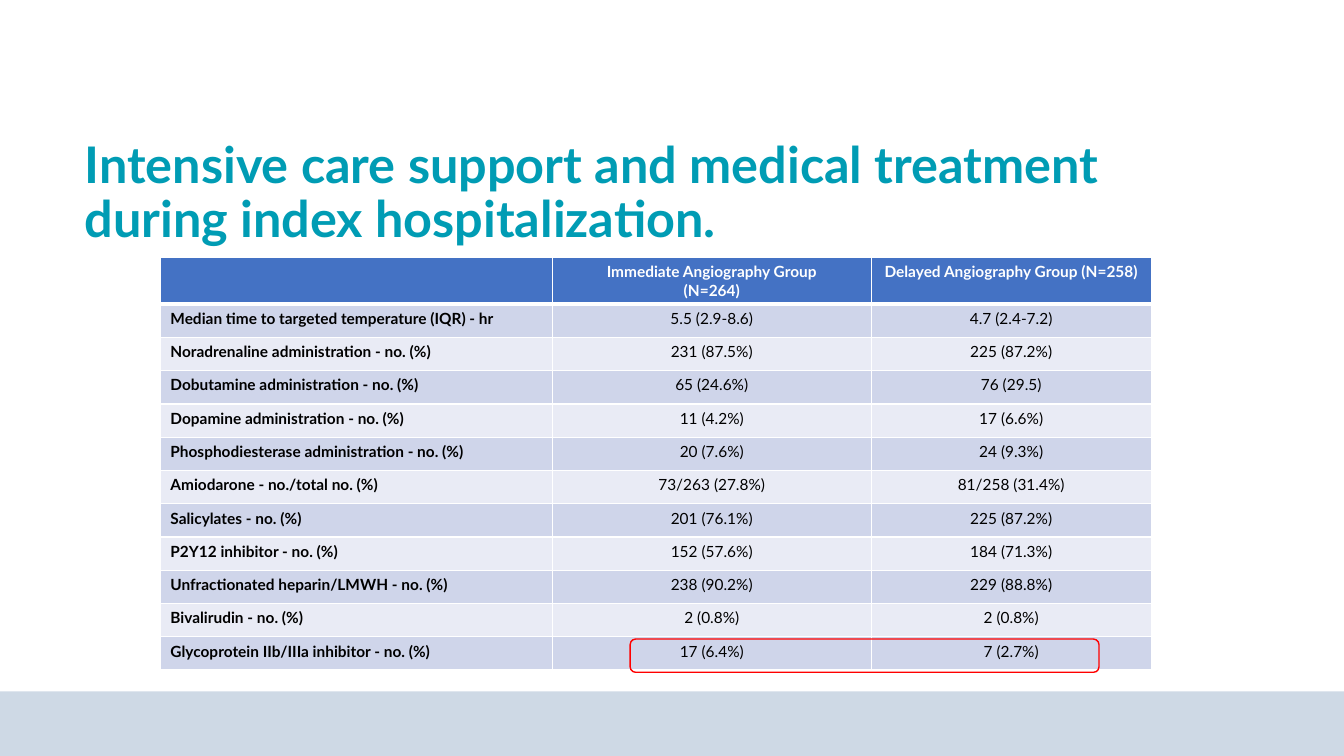
import pptx
import pptx.dml.color
import pptx.enum.shapes
import pptx.enum.text
import pptx.oxml
import pptx.oxml.ns
import pptx.util

Inches = pptx.util.Inches
Pt = pptx.util.Pt
RGBColor = pptx.dml.color.RGBColor
MSO_SHAPE = pptx.enum.shapes.MSO_SHAPE
PP_ALIGN = pptx.enum.text.PP_ALIGN

TEAL = RGBColor(0x00, 0x9C, 0xB4)
FOOTER_GREY = RGBColor(0xCE, 0xD9, 0xE5)
HEADER_BLUE = RGBColor(0x44, 0x72, 0xC4)
BAND_DARK = RGBColor(0xCF, 0xD5, 0xEA)
BAND_LIGHT = RGBColor(0xE9, 0xEB, 0xF5)
WHITE = RGBColor(0xFF, 0xFF, 0xFF)
BLACK = RGBColor(0x00, 0x00, 0x00)
RED = RGBColor(0xFF, 0x00, 0x00)

COLUMN_WIDTHS = (3.89, 3.16, 2.78)
HEADER_HEIGHT = 0.45
ROW_HEIGHT = 0.33
TREATMENTS = [
    ("", "Immediate Angiography Group\n(N=264)", "Delayed Angiography Group (N=258)"),
    ("Median time to targeted temperature (IQR) - hr", "5.5 (2.9-8.6)", "4.7 (2.4-7.2)"),
    ("Noradrenaline administration - no. (%)", "231 (87.5%)", "225 (87.2%)"),
    ("Dobutamine administration - no. (%)", "65 (24.6%)", "76 (29.5)"),
    ("Dopamine administration - no. (%)", "11 (4.2%)", "17 (6.6%)"),
    ("Phosphodiesterase administration - no. (%)", "20 (7.6%)", "24 (9.3%)"),
    ("Amiodarone - no./total no. (%)", "73/263 (27.8%)", "81/258 (31.4%)"),
    ("Salicylates - no. (%)", "201 (76.1%)", "225 (87.2%)"),
    ("P2Y12 inhibitor - no. (%)", "152 (57.6%)", "184 (71.3%)"),
    ("Unfractionated heparin/LMWH - no. (%)", "238 (90.2%)", "229 (88.8%)"),
    ("Bivalirudin - no. (%)", "2 (0.8%)", "2 (0.8%)"),
    ("Glycoprotein IIb/IIIa inhibitor - no. (%)", "17 (6.4%)", "7 (2.7%)"),
]


def set_font(paragraph, size, color, bold):
    formats = {"name": "Lato", "size": Pt(size), "bold": bold}
    for run in paragraph.runs:
        for attribute, value in formats.items():
            setattr(run.font, attribute, value)
        run.font.color.rgb = color


def set_white_borders(cell, bottom_width):
    widths = {"lnL": 1, "lnR": 1, "lnT": 1, "lnB": bottom_width}
    properties = cell._tc.get_or_add_tcPr()
    for position, (side, width) in enumerate(widths.items()):
        properties.insert(position, pptx.oxml.parse_xml(
            f'<a:{side} {pptx.oxml.ns.nsdecls("a")} w="{Pt(width)}">'
            f'<a:solidFill><a:srgbClr val="{WHITE}"/></a:solidFill></a:{side}>'))


presentation = pptx.Presentation()
presentation.slide_width = Inches(13.33)
presentation.slide_height = Inches(7.5)
slide = presentation.slides.add_slide(presentation.slide_layouts[6])

footer_band = slide.shapes.add_shape(
    MSO_SHAPE.RECTANGLE, 0, Inches(6.86), Inches(13.33), Inches(0.64))
footer_band.shadow.inherit = False
footer_band.fill.solid()
footer_band.fill.fore_color.rgb = FOOTER_GREY
footer_band.line.fill.background()

title = slide.shapes.add_textbox(Inches(0.74), Inches(1.2), Inches(11.77), Inches(1.45)).text_frame
title.word_wrap = True
title.vertical_anchor = pptx.enum.text.MSO_ANCHOR.MIDDLE
title.text = "Intensive care support and medical treatment during index hospitalization."
title.paragraphs[0].line_spacing = 0.9
set_font(title.paragraphs[0], 36, TEAL, True)

treatment_table = slide.shapes.add_table(
    len(TREATMENTS), len(COLUMN_WIDTHS), Inches(1.59), Inches(2.55), Inches(sum(COLUMN_WIDTHS)),
    Inches(HEADER_HEIGHT + ROW_HEIGHT * (len(TREATMENTS) - 1))).table
for column, width in zip(treatment_table.columns, COLUMN_WIDTHS):
    column.width = Inches(width)

for row_index, treatment in enumerate(TREATMENTS):
    is_header = row_index == 0
    treatment_table.rows[row_index].height = Inches(HEADER_HEIGHT if is_header else ROW_HEIGHT)
    band = HEADER_BLUE if is_header else BAND_DARK if row_index % 2 else BAND_LIGHT
    for column_index, content in enumerate(treatment):
        cell = treatment_table.cell(row_index, column_index)
        cell.fill.solid()
        cell.fill.fore_color.rgb = band
        set_white_borders(cell, 3 if is_header else 1)
        cell.text = content
        for paragraph in cell.text_frame.paragraphs:
            paragraph.alignment = PP_ALIGN.CENTER if column_index else PP_ALIGN.LEFT
            set_font(paragraph, 11, WHITE if is_header else BLACK,
                     is_header or column_index == 0)

inhibitor_highlight = slide.shapes.add_shape(
    MSO_SHAPE.ROUNDED_RECTANGLE, Inches(6.25), Inches(6.34), Inches(4.65), Inches(0.33))
inhibitor_highlight.shadow.inherit = False
inhibitor_highlight.fill.background()
inhibitor_highlight.line.color.rgb = RED
inhibitor_highlight.line.width = Pt(1)

presentation.save("out.pptx")
